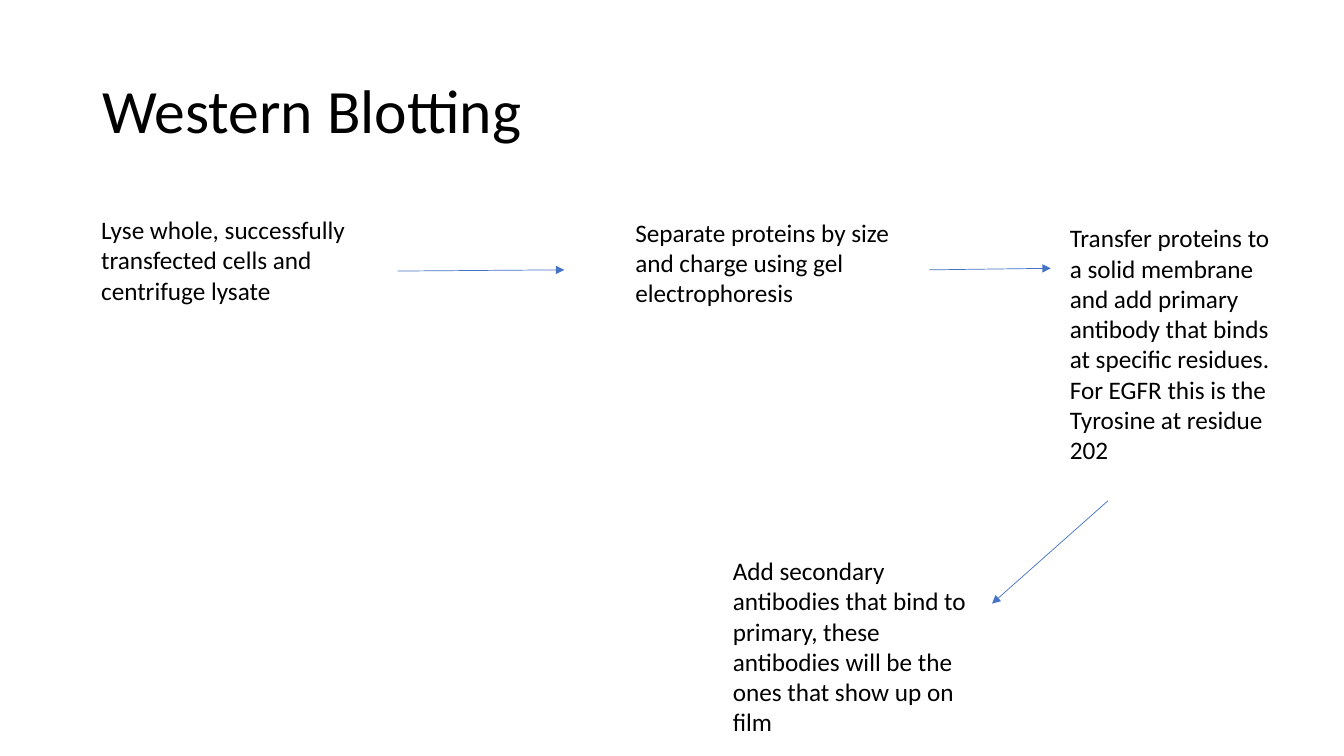
from lxml import etree
from pptx import Presentation
from pptx.dml.color import RGBColor
from pptx.enum.shapes import MSO_CONNECTOR
from pptx.enum.text import MSO_ANCHOR
from pptx.oxml.ns import qn
from pptx.util import Cm, Pt

STRAIGHT = MSO_CONNECTOR.STRAIGHT
TOP = MSO_ANCHOR.TOP
MIDDLE = MSO_ANCHOR.MIDDLE

COLORS = {"text": "000000", "arrow": "4472C4"}
FONT = "Calibri"

deck = Presentation()
deck.slide_width = Cm(33.87)
deck.slide_height = Cm(19.05)
slide = deck.slides.add_slide(deck.slide_layouts[6])


def add_text(box, text, size, anchor, spacing):
    frame = slide.shapes.add_textbox(*[Cm(n) for n in box]).text_frame
    frame.word_wrap = True
    frame.vertical_anchor = anchor
    para = frame.paragraphs[0]
    para.line_spacing = spacing
    run = para.add_run()
    run.text = text
    run.font.name = FONT
    run.font.size = Pt(size)
    run.font.color.rgb = RGBColor.from_string(COLORS["text"])


add_text((2.33, 1.01, 29.21, 3.68), "Western Blotting", 44, MIDDLE, 0.9)

steps = [
    ((2.3, 5.28, 6.86, 2.57),
     "Lyse whole, successfully transfected cells and centrifuge lysate"),
    ((15.76, 5.35, 7.04, 2.57),
     "Separate proteins by size and charge using gel electrophoresis"),
    ((26.71, 5.49, 5.56, 6.4),
     "Transfer proteins to a solid membrane and add primary antibody that "
     "binds at specific residues. For EGFR this is the Tyrosine at residue 202"),
    ((18.22, 13.87, 6.4, 4.88),
     "Add secondary antibodies that bind to primary, these antibodies will be "
     "the ones that show up on film"),
]
for box, text in steps:
    add_text(box, text, 18, TOP, 1.0)

arrows = [
    (10.02, 6.83, 14.22, 6.8),
    (23.42, 6.8, 26.48, 6.76),
    (27.92, 12.62, 25.0, 15.21),
]
for ends in arrows:
    arrow = slide.shapes.add_connector(STRAIGHT, *[Cm(n) for n in ends])
    arrow.line.color.rgb = RGBColor.from_string(COLORS["arrow"])
    arrow.line.width = Pt(0.5)
    props = arrow.line._get_or_add_ln()
    etree.SubElement(props, qn("a:tailEnd"), type="triangle")
    etree.SubElement(props.getparent(), qn("a:effectLst"))

deck.save("out.pptx")
